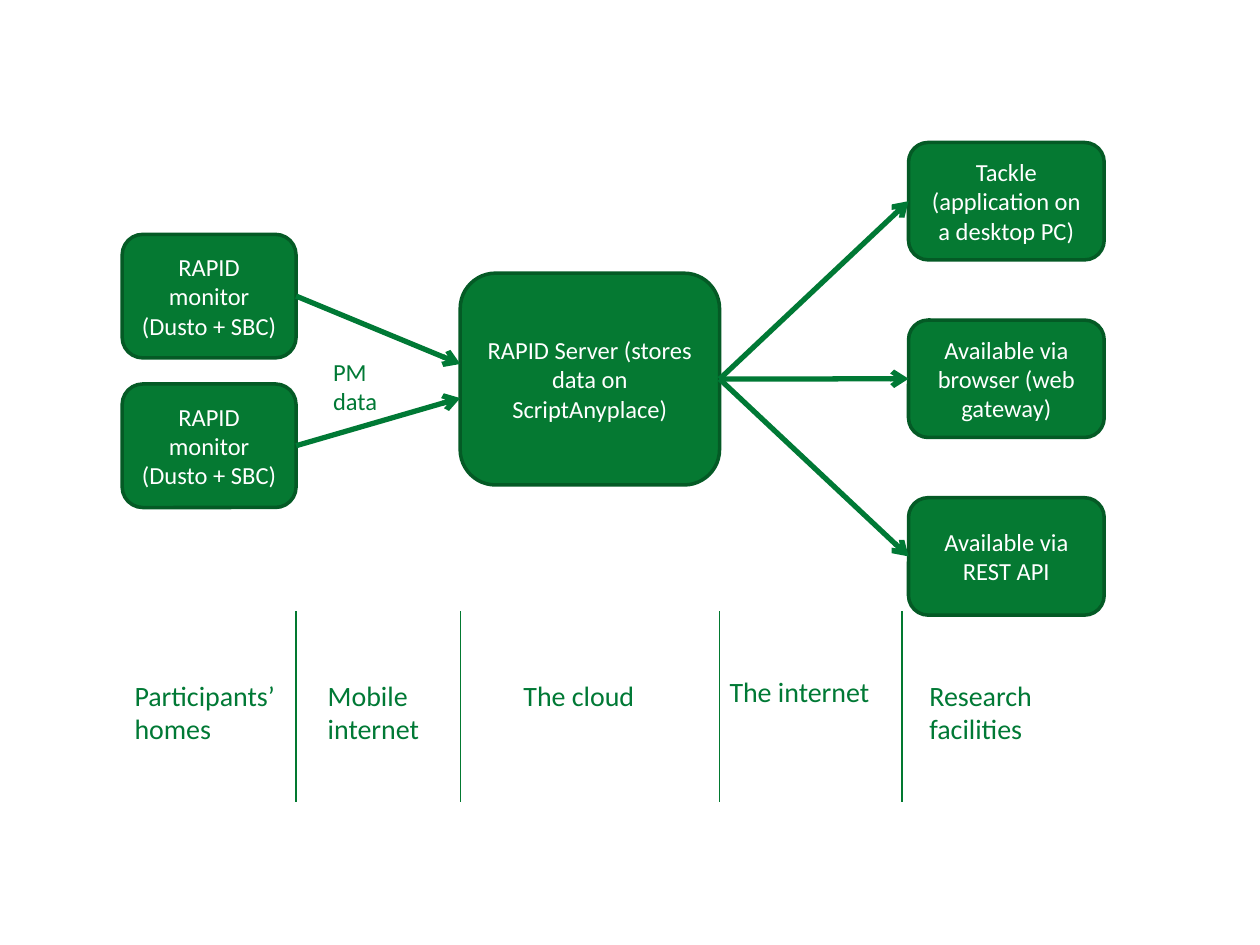
from dataclasses import dataclass

from lxml import etree
from pptx import Presentation
from pptx.dml.color import RGBColor
from pptx.enum.shapes import MSO_CONNECTOR, MSO_SHAPE
from pptx.enum.text import MSO_ANCHOR, PP_ALIGN
from pptx.oxml.ns import qn
from pptx.util import Pt

STRAIGHT = MSO_CONNECTOR.STRAIGHT
ROUNDED = MSO_SHAPE.ROUNDED_RECTANGLE
MIDDLE = MSO_ANCHOR.MIDDLE
LEFT, CENTER = PP_ALIGN.LEFT, PP_ALIGN.CENTER
LEFT_SIDE, RIGHT_SIDE = 1, 3

COLORS = {
    "box": "057932",
    "border": "045A25",
    "green": "007935",
    "divider": "027930",
    "white": "FFFFFF",
}
FONT = "Calibri"


@dataclass
class Box:
    text: str
    left: float
    top: float
    width: float
    height: float


@dataclass
class Label:
    text: str
    left: float
    top: float
    width: float
    height: float
    size: float = 16
    align: PP_ALIGN = LEFT


def color(name: str) -> RGBColor:
    return RGBColor.from_string(COLORS[name])


def format_text(frame, text: str, size: float, color_name: str, align) -> None:
    frame.word_wrap = True
    frame.text = text
    for para in frame.paragraphs:
        para.alignment = align
        para.font.name = FONT
        para.font.size = Pt(size)
        para.font.color.rgb = color(color_name)


def draw_box(slide, box: Box):
    shape = slide.shapes.add_shape(
        ROUNDED, Pt(box.left), Pt(box.top), Pt(box.width), Pt(box.height))
    shape.shadow.inherit = False
    shape.fill.solid()
    shape.fill.fore_color.rgb = color("box")
    shape.line.color.rgb = color("border")
    shape.line.width = Pt(2)
    shape.text_frame.vertical_anchor = MIDDLE
    format_text(shape.text_frame, box.text, 14, "white", CENTER)
    return shape


def draw_label(slide, label: Label) -> None:
    shape = slide.shapes.add_textbox(
        Pt(label.left), Pt(label.top), Pt(label.width), Pt(label.height))
    format_text(shape.text_frame, label.text, label.size, "green", label.align)


def draw_line(slide, start, end, color_name: str, width: float):
    line = slide.shapes.add_connector(
        STRAIGHT, Pt(start[0]), Pt(start[1]), Pt(end[0]), Pt(end[1]))
    line.line.color.rgb = color(color_name)
    line.line.width = Pt(width)
    etree.SubElement(line._element.spPr, qn("a:effectLst"))
    return line


def draw_arrow(slide, source, end=(0, 0), target=None) -> None:
    """Run from the source's right side to the target's left side, or to a point."""
    arrow = draw_line(slide, (0, 0), end, "green", 3)
    arrow.begin_connect(source, RIGHT_SIDE)
    if target is not None:
        arrow.end_connect(target, LEFT_SIDE)
    etree.SubElement(arrow.line._get_or_add_ln(), qn("a:tailEnd"), type="arrow")


SERVER = Box("RAPID Server (stores data on ScriptAnyplace)", 263, 156.1, 148.2, 121)
MONITORS = [
    Box("RAPID monitor\n(Dusto + SBC)", 69.8, 133.9 + 85.5 * row, 99.4, 70.6)
    for row in range(2)
]
MONITOR_ARROW_ENDS = [(263, 208), (263, 227.5)]
OUTPUTS = [
    Box(text, 519.2, 81.4 + 101.5 * row, 111.8, 67.1)
    for row, text in enumerate([
        "Tackle (application on a desktop PC)",
        "Available via browser (web gateway)",
        "Available via REST API",
    ])
]
LABELS = [
    Label("PM data", 183.2, 200.2, 60, 41, size=14),
    Label("Participants’\vhomes", 69.8, 384, 126, 46),
    Label("Mobile\vinternet", 180.2, 384, 126, 46),
    Label("The cloud", 267.8, 384, 126, 26.6, align=CENTER),
    Label("The internet", 393.8, 382.2, 126, 26.6, align=CENTER),
    Label("Research facilities", 524, 384, 126, 46),
]
DIVIDERS = [169.2, 263.3, 411.2, 515.5]
DIVIDER_TOP, DIVIDER_BOTTOM = 349.2, 458.5


def main() -> None:
    deck = Presentation()
    deck.slide_width, deck.slide_height = Pt(720), Pt(540)
    slide = deck.slides.add_slide(deck.slide_layouts.get_by_name("Blank"))

    server = draw_box(slide, SERVER)
    for monitor, end in zip(MONITORS, MONITOR_ARROW_ENDS):
        draw_arrow(slide, draw_box(slide, monitor), end=end)
    for output in OUTPUTS:
        draw_arrow(slide, server, target=draw_box(slide, output))
    for label in LABELS:
        draw_label(slide, label)
    for x in DIVIDERS:
        draw_line(slide, (x, DIVIDER_TOP), (x, DIVIDER_BOTTOM), "divider", 0.75)

    deck.save("out.pptx")


if __name__ == "__main__":
    main()
